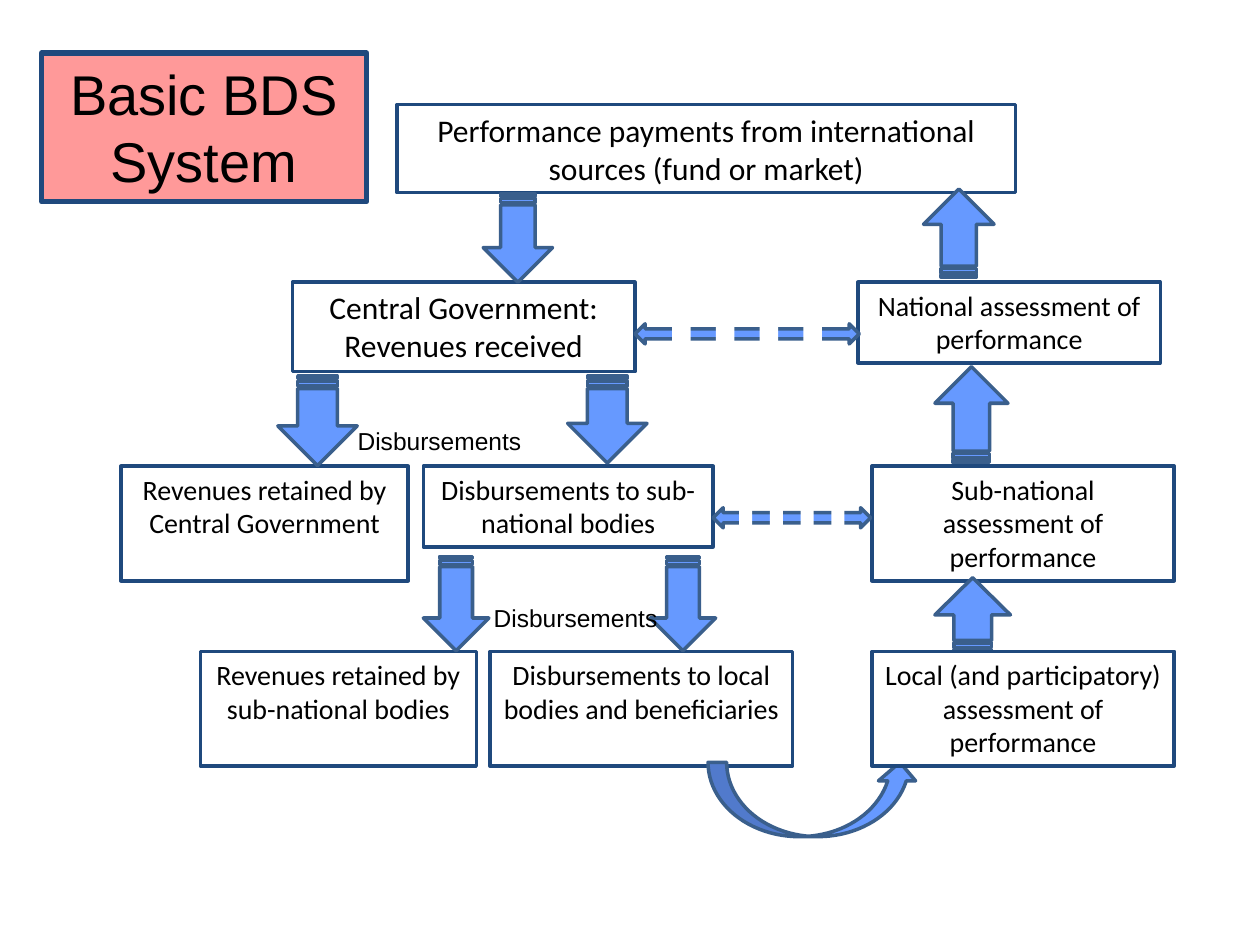
from collections import namedtuple
from dataclasses import dataclass

from pptx import Presentation
from pptx.dml.color import RGBColor
from pptx.enum.shapes import MSO_SHAPE
from pptx.enum.text import MSO_ANCHOR, MSO_AUTO_SIZE, PP_ALIGN
from pptx.util import Inches, Pt

RECT = MSO_SHAPE.RECTANGLE
STRIPED = MSO_SHAPE.STRIPED_RIGHT_ARROW
CURVED = MSO_SHAPE.CURVED_UP_ARROW
TWO_WAY = MSO_SHAPE.LEFT_RIGHT_ARROW
TOP = MSO_ANCHOR.TOP
FIXED = MSO_AUTO_SIZE.NONE
CENTER, LEFT = PP_ALIGN.CENTER, PP_ALIGN.LEFT
DOWN, UP = 90, 270
TITLE_ONLY = 5


@dataclass(frozen=True)
class Theme:
    white: RGBColor = RGBColor(0xFF, 0xFF, 0xFF)
    ink: RGBColor = RGBColor(0, 0, 0)
    border: RGBColor = RGBColor(0x1F, 0x49, 0x7D)
    arrow: RGBColor = RGBColor(0x66, 0x99, 0xFF)
    arrow_edge: RGBColor = RGBColor(0x3A, 0x5F, 0x8C)
    title_fill: RGBColor = RGBColor(0xFF, 0x99, 0x99)
    body_font: str = "Calibri"
    title_font: str = "Arial"
    title_size: int = 32
    major_size: int = 18
    minor_size: int = 16
    label_size: int = 14
    line: int = 2
    title_line: int = 3


THEME = Theme()


class Box(namedtuple("Box", "left top width height")):
    def at(self, left, top, width, height):
        return Box(self.left + left, self.top + top, width, height)

    def lengths(self):
        return [Inches(value) for value in self]


def paint(shape, fill, edge=None, weight=THEME.line):
    shape.fill.solid()
    shape.fill.fore_color.rgb = fill
    if edge is None:
        shape.line.fill.background()
    else:
        shape.line.color.rgb = edge
        shape.line.width = Pt(weight)


def write(shape, lines, font, size, align=CENTER):
    frame = shape.text_frame
    frame.text = "\n".join(lines)
    frame.word_wrap = True
    frame.auto_size = FIXED
    frame.vertical_anchor = TOP
    for paragraph in frame.paragraphs:
        paragraph.alignment = align
        paragraph.font.name = font
        paragraph.font.size = Pt(size)
        paragraph.font.color.rgb = THEME.ink


def add_shape(slide, kind, box, fill, edge=None):
    shape = slide.shapes.add_shape(kind, *box.lengths())
    shape.shadow.inherit = False
    paint(shape, fill, edge)
    return shape


def add_step(slide, box, *lines, size=THEME.minor_size):
    step = add_shape(slide, RECT, box, THEME.white, THEME.border)
    write(step, lines, THEME.body_font, size)


def add_block_arrow(slide, region, center_x, center_y, length, breadth, turn):
    box = region.at(center_x - length / 2, center_y - breadth / 2, length, breadth)
    add_shape(slide, STRIPED, box, THEME.arrow, THEME.arrow_edge).rotation = turn


def add_label(slide, box, text):
    label = slide.shapes.add_textbox(*box.lengths())
    write(label, [text], THEME.title_font, THEME.label_size, LEFT)


def draw_title(slide, box):
    title = slide.shapes.title
    title.left, title.top, title.width, title.height = box.lengths()
    paint(title, THEME.title_fill, THEME.border, THEME.title_line)
    write(title, ["Basic BDS System"], THEME.title_font, THEME.title_size)


def draw_revenues(slide, region):
    add_step(slide, region.at(2.19, 0, 4.91, 0.7),
             "Performance payments from international sources (fund or market)",
             size=THEME.major_size)
    add_step(slide, region.at(1.36, 1.41, 2.72, 0.71),
             "Central Government:", "Revenues received", size=THEME.major_size)
    add_step(slide, region.at(0, 2.87, 2.28, 0.91),
             "Revenues retained by Central Government")
    add_step(slide, region.at(2.4, 2.87, 2.3, 0.64),
             "Disbursements to sub-national bodies")
    add_step(slide, region.at(0.63, 4.34, 2.19, 0.91),
             "Revenues retained by sub-national bodies")
    add_step(slide, region.at(2.93, 4.34, 2.4, 0.91),
             "Disbursements to local bodies and beneficiaries")
    for center_x, center_y, length, breadth in (
        (3.15, 1.06, 0.7, 0.55),
        (1.56, 2.51, 0.71, 0.63),
        (3.86, 2.5, 0.69, 0.63),
        (2.66, 3.96, 0.75, 0.52),
        (4.46, 3.96, 0.75, 0.52),
    ):
        add_block_arrow(slide, region, center_x, center_y, length, breadth, DOWN)
    for left, top in ((1.78, 2.5), (2.86, 3.91)):
        add_label(slide, region.at(left, top, 1.77, 0.34), "Disbursements")


def draw_assessments(slide, region):
    add_step(slide, region.at(0, 0.74, 2.4, 0.64),
             "National assessment of performance")
    add_step(slide, region.at(0.11, 2.2, 2.4, 0.91),
             "Sub-national assessment of performance")
    for center_x, center_y, length, breadth in (
        (0.8, 0.35, 0.7, 0.56),
        (0.9, 1.79, 0.76, 0.58),
        (0.91, 3.38, 0.59, 0.6),
    ):
        add_block_arrow(slide, region, center_x, center_y, length, breadth, UP)


def draw_local_feedback(slide, region):
    add_shape(slide, CURVED, region.at(0, 0.88, 1.67, 0.59),
              THEME.arrow, THEME.arrow_edge)
    add_step(slide, region.at(1.3, 0, 2.4, 0.91),
             "Local (and participatory) assessment of performance")


def draw_dashed_link(slide, box, gaps=4):
    add_shape(slide, TWO_WAY, box, THEME.arrow, THEME.arrow_edge)
    first, pitch, gap = (box.width * share for share in (0.165, 0.195, 0.083))
    for index in range(gaps):
        add_shape(slide, RECT, box.at(first + index * pitch, 0, gap, box.height),
                  THEME.white)


def main():
    deck = Presentation()
    deck.slide_width, deck.slide_height = Inches(10), Inches(7.5)
    slide = deck.slides.add_slide(deck.slide_layouts[TITLE_ONLY])
    draw_title(slide, Box(0.33, 0.42, 2.58, 1.18))
    draw_revenues(slide, Box(0.96, 0.83, 7.1, 5.25))
    draw_assessments(slide, Box(6.81, 1.5, 2.51, 3.68))
    draw_dashed_link(slide, Box(5.66, 4.03, 1.25, 0.16))
    draw_dashed_link(slide, Box(5.04, 2.57, 1.78, 0.16))
    draw_local_feedback(slide, Box(5.62, 5.17, 3.7, 1.47))
    deck.save("out.pptx")


if __name__ == "__main__":
    main()
